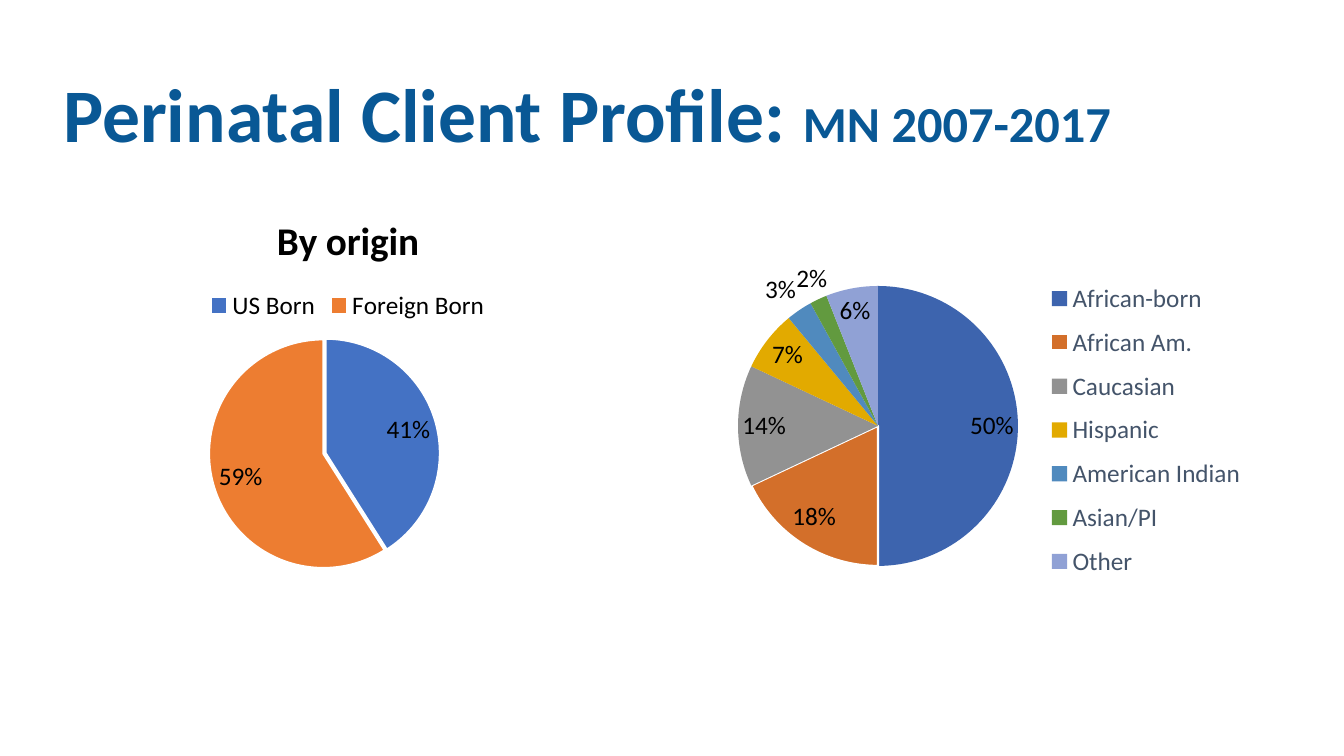
from lxml.etree import SubElement
from pptx import Presentation
from pptx.chart.data import CategoryChartData
from pptx.dml.color import RGBColor
from pptx.enum.chart import XL_CHART_TYPE as ChartType
from pptx.enum.chart import XL_LABEL_POSITION as LabelPosition
from pptx.enum.chart import XL_LEGEND_POSITION as LegendPosition
from pptx.enum.text import MSO_ANCHOR as Anchor
from pptx.enum.text import PP_ALIGN as Align
from pptx.oxml.ns import qn
from pptx.util import Pt

EMU_PER_PX = 914400 / 100.8
FONT = "Calibri"
COLORS = {
    "title": "095895", "text": "000000", "legend": "44546A", "edge": "FFFFFF",
    "us": "4472C4", "foreign": "ED7D31",
    "african_born": "3D64AE", "african_am": "D36F2A", "caucasian": "929292",
    "hispanic": "E2AA00", "american_indian": "508ABE", "asian": "629A3F",
    "other": "90A1D5",
}


def px(length):
    return round(length * EMU_PER_PX)


def color(name):
    return RGBColor.from_string(COLORS[name])


def style_font(font, size, color_name, bold=False):
    font.name = FONT
    font.size = Pt(size)
    font.bold = bold
    font.color.rgb = color(color_name)


def place_title(slide, left, top, width, height, parts):
    title = slide.shapes.title
    title.left, title.top = px(left), px(top)
    title.width, title.height = px(width), px(height)
    frame = title.text_frame
    frame.word_wrap = True
    frame.vertical_anchor = Anchor.BOTTOM
    para = frame.paragraphs[0]
    para.alignment = Align.LEFT
    para.line_spacing = 0.9
    for text, size in parts:
        span = para.add_run()
        span.text = text
        style_font(span.font, size, "title", True)


def make_layout(parent, index, frame, area, inner=False):
    for old in parent.findall(qn("c:layout")):
        parent.remove(old)
    layout = SubElement(parent, qn("c:layout"))
    parent.insert(index, layout)
    manual = SubElement(layout, qn("c:manualLayout"))
    if inner:
        SubElement(manual, qn("c:layoutTarget")).set("val", "inner")
    for axis in "xy":
        SubElement(manual, qn(f"c:{axis}Mode")).set("val", "edge")
    left, top, width, height = frame
    fractions = ((area[0] - left) / width, (area[1] - top) / height,
                 area[2] / width, area[3] / height)
    for key, fraction in zip("xywh", fractions):
        SubElement(manual, qn(f"c:{key}")).set("val", f"{fraction:.4f}")


def explode(element, index, percent):
    explosion = SubElement(element, qn("c:explosion"))
    explosion.set("val", str(percent))
    element.insert(index, explosion)


def add_pie(slide, frame, name, slices, pie_area, legend_position, legend_color):
    data = CategoryChartData(number_format="General")
    data.categories = [label for label, _, _ in slices]
    data.add_series(name, [value for _, value, _ in slices])
    chart = slide.shapes.add_chart(
        ChartType.PIE, *(px(length) for length in frame), data).chart
    chart.has_title = False
    style_font(chart.font, 18, "text")
    chart.has_legend = True
    chart.legend.position = legend_position
    chart.legend.include_in_layout = False
    style_font(chart.legend.font, 18, legend_color)

    plot = chart.plots[0]
    plot.vary_by_categories = True
    for index, (_, _, color_name) in enumerate(slices):
        fill = plot.series[0].points[index].format.fill
        fill.solid()
        fill.fore_color.rgb = color(color_name)
    plot.has_data_labels = True
    labels = plot.data_labels
    labels.number_format = "0%"
    labels.number_format_is_linked = False
    labels.position = LabelPosition.BEST_FIT
    style_font(labels.font, 18, "text")
    make_layout(plot._element.getparent(), 0, frame, pie_area, inner=True)
    return chart


def outline(point):
    point.format.line.color.rgb = color("edge")
    point.format.line.width = Pt(1.5)


def add_origin_chart(slide):
    slices = [("US Born", 41, "us"), ("Foreign Born", 59, "foreign")]
    chart = add_pie(slide, (49, 194, 598, 388), "By origin", slices,
                    (209, 338, 231, 231), LegendPosition.TOP, "text")
    chart.has_title = True
    para = chart.chart_title.text_frame.paragraphs[0]
    para.text = "By origin"
    style_font(para.runs[0].font, 28, "text", True)
    labels = chart.plots[0].data_labels
    labels.show_percentage = True
    labels.show_value = False
    series = chart.plots[0].series[0]
    for index in range(len(slices)):
        outline(series.points[index])
    tx = series._element.find(qn("c:tx"))
    explode(series._element, series._element.index(tx) + 1, 1)


def add_group_chart(slide):
    slices = [
        ("African-born", 0.5, "african_born"),
        ("African Am.", 0.18, "african_am"),
        ("Caucasian", 0.14, "caucasian"),
        ("Hispanic", 0.07, "hispanic"),
        ("American Indian", 0.03, "american_indian"),
        ("Asian/PI", 0.02, "asian"),
        ("Other", 0.06, "other"),
    ]
    frame = (669, 235, 584, 372)
    chart = add_pie(slide, frame, "Series 1", slices,
                    (738, 286, 280, 280), LegendPosition.RIGHT, "legend")
    chart.plots[0].data_labels.show_value = True
    outline(chart.plots[0].series[0].points[1])
    make_layout(chart.legend._element, 1, frame, (1042, 270, 208, 320))


def main():
    deck = Presentation()
    deck.slide_width, deck.slide_height = px(1344), px(756)
    page = deck.slides.add_slide(deck.slide_layouts[5])
    place_title(page, 53, 46, 1180, 118,
                [("Perinatal Client Profile: ", 54), ("MN 2007-2017", 36)])
    add_origin_chart(page)
    add_group_chart(page)
    deck.save("out.pptx")


if __name__ == "__main__":
    main()
